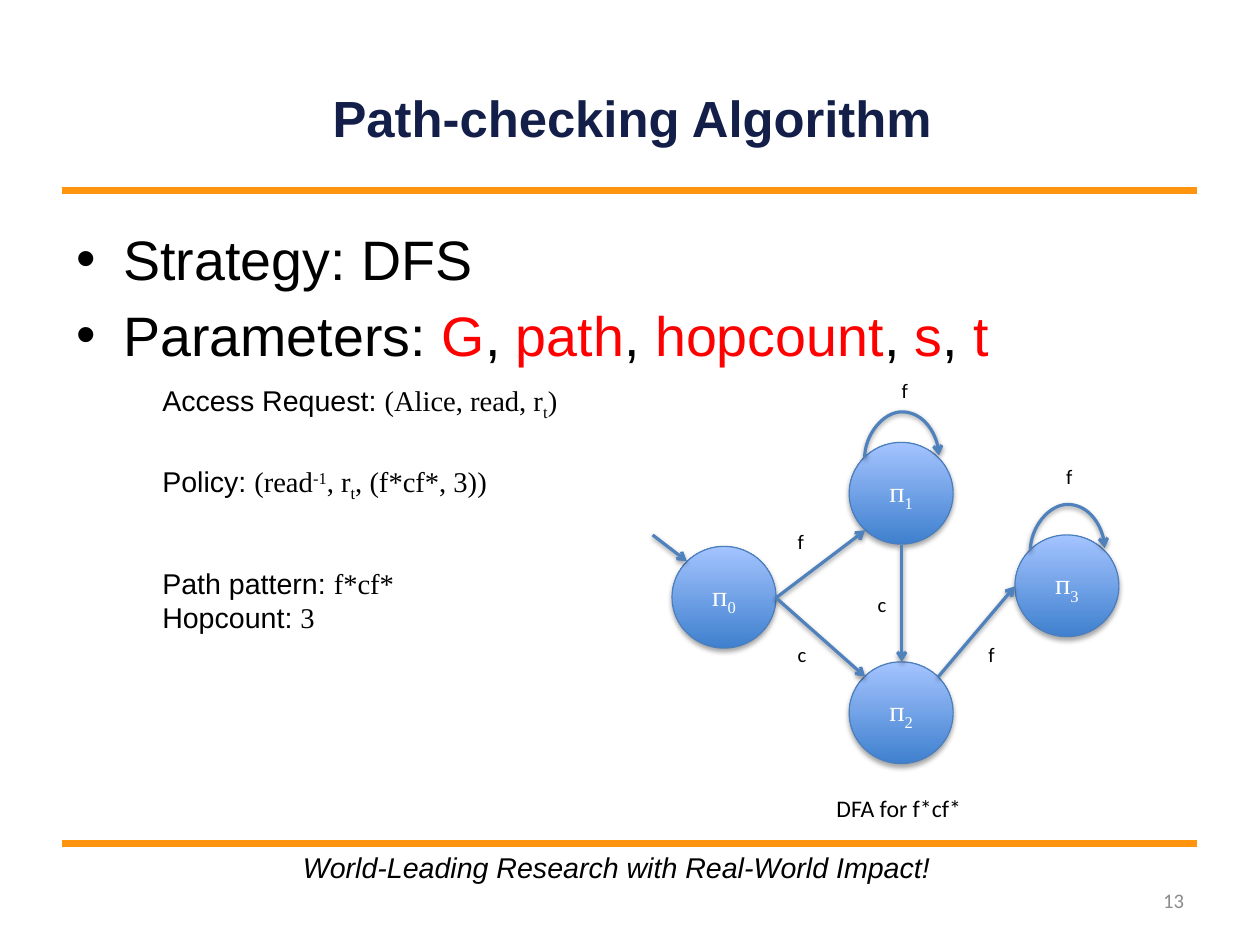
from lxml.etree import SubElement
from pptx import Presentation
from pptx.dml.color import RGBColor
from pptx.enum.shapes import MSO_CONNECTOR, MSO_SHAPE
from pptx.enum.text import MSO_ANCHOR, MSO_AUTO_SIZE, PP_ALIGN
from pptx.oxml.ns import qn
from pptx.util import Emu, Pt

COLOURS = {
    "black": "000000", "white": "FFFFFF", "navy": "131F49", "red": "FF0000",
    "orange": "FF950E", "grey": "8C8C8C", "arrow": "4F81BD",
    "outline": "4B7EBC", "node dark": "3F80CE", "node light": "A4C4FF",
}
SERIF = {"font": "Times New Roman"}
SUB = {"font": "Times New Roman", "base": -25}
SUPER = {"font": "Times New Roman", "base": 30}
RED = {"colour": "red"}
NODE_WIDTH, NODE_HEIGHT = 91, 89


def px(length):
    return Emu(length * 9144)


def colour(name):
    return RGBColor.from_string(COLOURS[name])


class SlideWriter:
    """Holds the style and the current slide, with a method for each element."""

    def __init__(self, deck):
        self.page = deck.slides.add_slide(deck.slide_layouts[1])
        self.shapes = self.page.shapes

    def fill_para(self, para, spans, size, font="Arial", ink="black",
                  align=None, bold=None, italic=None):
        para.alignment = align
        para.font.size = Pt(size)
        para.font.name = font
        para.font.color.rgb = colour(ink)
        para.font.bold = bold
        para.font.italic = italic
        for text, style in spans:
            span = para.add_run()
            span.text = text
            if "font" in style:
                span.font.name = style["font"]
            if "colour" in style:
                span.font.color.rgb = colour(style["colour"])
            if "base" in style:
                span._r.get_or_add_rPr().set("baseline", str(style["base"] * 1000))

    def set_frame(self, box, margins=(11, 6), anchor=MSO_ANCHOR.TOP):
        frame = box.text_frame
        frame.word_wrap = True
        frame.auto_size = MSO_AUTO_SIZE.NONE
        frame.vertical_anchor = anchor
        frame.margin_left = frame.margin_right = px(margins[0])
        frame.margin_top = frame.margin_bottom = px(margins[1])
        return frame

    def place(self, shape, left, top, width, height):
        shape.left, shape.top = px(left), px(top)
        shape.width, shape.height = px(width), px(height)

    def title(self, text, *area):
        box = self.shapes.title
        self.place(box, *area)
        frame = self.set_frame(box, (0, 0), MSO_ANCHOR.MIDDLE)
        self.fill_para(frame.paragraphs[0], [(text, {})], 32, ink="navy",
                       align=PP_ALIGN.CENTER, bold=True)

    def bullets(self, items, *area):
        box = self.page.placeholders[1]
        self.place(box, *area)
        frame = self.set_frame(box)
        for index, spans in enumerate(items):
            para = frame.add_paragraph() if index else frame.paragraphs[0]
            properties = para._p.get_or_add_pPr()
            properties.set("marL", str(px(41)))
            properties.set("indent", str(px(-41)))
            SubElement(properties, qn("a:buFont")).set("typeface", "Arial")
            SubElement(properties, qn("a:buChar")).set("char", "•")
            para.space_before = Pt(6 if index else 0)
            self.fill_para(para, spans, 35)

    def text(self, lines, area, size, margins=(11, 6), anchor=MSO_ANCHOR.TOP, **style):
        box = self.shapes.add_textbox(*map(px, area))
        frame = self.set_frame(box, margins, anchor)
        for index, spans in enumerate(lines):
            para = frame.add_paragraph() if index else frame.paragraphs[0]
            self.fill_para(para, spans, size, **style)

    def label(self, text, left, top, width=28, size=13):
        self.text([[(text, {})]], (left, top, width, 32), size, (10, 5), font="Calibri")

    def shadow(self, shape, distance, opacity):
        effects = SubElement(shape._element.spPr, qn("a:effectLst"))
        outer = SubElement(effects, qn("a:outerShdw"), blurRad="40000",
                           dist=str(distance), dir="5400000", rotWithShape="0")
        ink = SubElement(outer, qn("a:srgbClr"), val=COLOURS["black"])
        SubElement(ink, qn("a:alpha"), val=str(opacity * 1000))

    def node(self, number, left, top):
        circle = self.shapes.add_shape(
            MSO_SHAPE.OVAL, px(left), px(top), px(NODE_WIDTH), px(NODE_HEIGHT))
        circle.fill.gradient()
        circle.fill.gradient_angle = 90
        for stop, position, name in zip(
                circle.fill.gradient_stops, (0, 1), ("node dark", "node light")):
            stop.position = position
            stop.color.rgb = colour(name)
        circle.line.color.rgb = colour("outline")
        circle.line.width = Pt(0.75)
        self.shadow(circle, 23000, 35)
        frame = self.set_frame(circle, (10, 5), MSO_ANCHOR.MIDDLE)
        self.fill_para(frame.paragraphs[0], [("п", {}), (str(number), {"base": -25})],
                       18, "Times New Roman", "white", PP_ALIGN.CENTER)

    def connector(self, start, end, ink, width, kind=MSO_CONNECTOR.STRAIGHT):
        line = self.shapes.add_connector(kind, *map(px, start + end))
        line.line.color.rgb = colour(ink)
        line.line.width = Pt(width)
        return line

    def rule(self, top):
        line = self.connector((54, top), (1047, top), "orange", 4.31)
        SubElement(line._element.spPr, qn("a:effectLst"))

    def arrow(self, start, end, kind=MSO_CONNECTOR.STRAIGHT):
        line = self.connector(start, end, "arrow", 2, kind)
        SubElement(line.line._get_or_add_ln(), qn("a:tailEnd"), type="arrow")
        self.shadow(line, 20000, 38)
        return line

    def loop(self, node_left, node_top):
        middle, height = node_left + 46, node_top + 13
        line = self.arrow((middle + 1, height + 32), (middle - 1, height - 33),
                          MSO_CONNECTOR.CURVE)
        properties = line._element.spPr
        properties.find(qn("a:xfrm")).set("rot", "5400000")
        adjustments = properties.find(qn("a:prstGeom")).find(qn("a:avLst"))
        SubElement(adjustments, qn("a:gd"), name="adj1", fmla="val 2000000")


def main():
    deck = Presentation()
    deck.slide_width, deck.slide_height = Emu(10080625), Emu(7559675)
    page = SlideWriter(deck)

    for top in (167, 738):
        page.rule(top)
    page.title("Path-checking Algorithm", 232, 65, 643, 75)
    parameters = [("Parameters: ", {}), ("G", RED)]
    for name in ("path", "hopcount", "s", "t"):
        parameters += [(", ", {}), (name, RED)]
    page.bullets([[("Strategy: DFS", {})], parameters], 56, 191, 992, 546)

    page.text([[("13", {})]], (790, 766, 257, 44), 13, anchor=MSO_ANCHOR.MIDDLE,
              font="Calibri", ink="grey", align=PP_ALIGN.RIGHT)
    page.text([[("World-Leading Research with Real-World Impact!", {})]],
              (254, 738, 590, 41), 18, italic=True)

    nodes = [(588, 478), (743, 387), (743, 579), (888, 468)]
    for number, (left, top) in enumerate(nodes):
        page.node(number, left, top)
    for start, end in [
        ((571, 468), (601, 491)), ((679, 523), (757, 464)), ((679, 523), (757, 592)),
        ((789, 477), (789, 579)), ((821, 592), (888, 513)),
    ]:
        page.arrow(start, end)
    for number in (1, 3):
        page.loop(*nodes[number])
    for text, left, top in [
        ("f", 779, 326), ("f", 688, 458), ("f", 923, 401),
        ("c", 688, 557), ("c", 758, 513), ("f", 855, 557),
    ]:
        page.label(text, left, top)
    page.label("DFA for f*cf*", 722, 689, 136, 15)

    page.text([[("Access Request: ", {}), ("(Alice, read, r", SERIF), ("t", SUB),
                (")", SERIF)]], (131, 329, 421, 41), 18)
    page.text([[("Policy: ", {}), ("(read", SERIF), ("-1", SUPER), (", r", SERIF),
                ("t", SUB), (", (f*cf*, 3))", SERIF)]], (131, 400, 378, 41), 18)
    page.text([[("Path pattern: ", {}), ("f*cf*", SERIF)],
               [("Hopcount: ", {}), ("3", SERIF)]], (131, 489, 378, 72), 18)
    deck.save("out.pptx")


if __name__ == "__main__":
    main()
